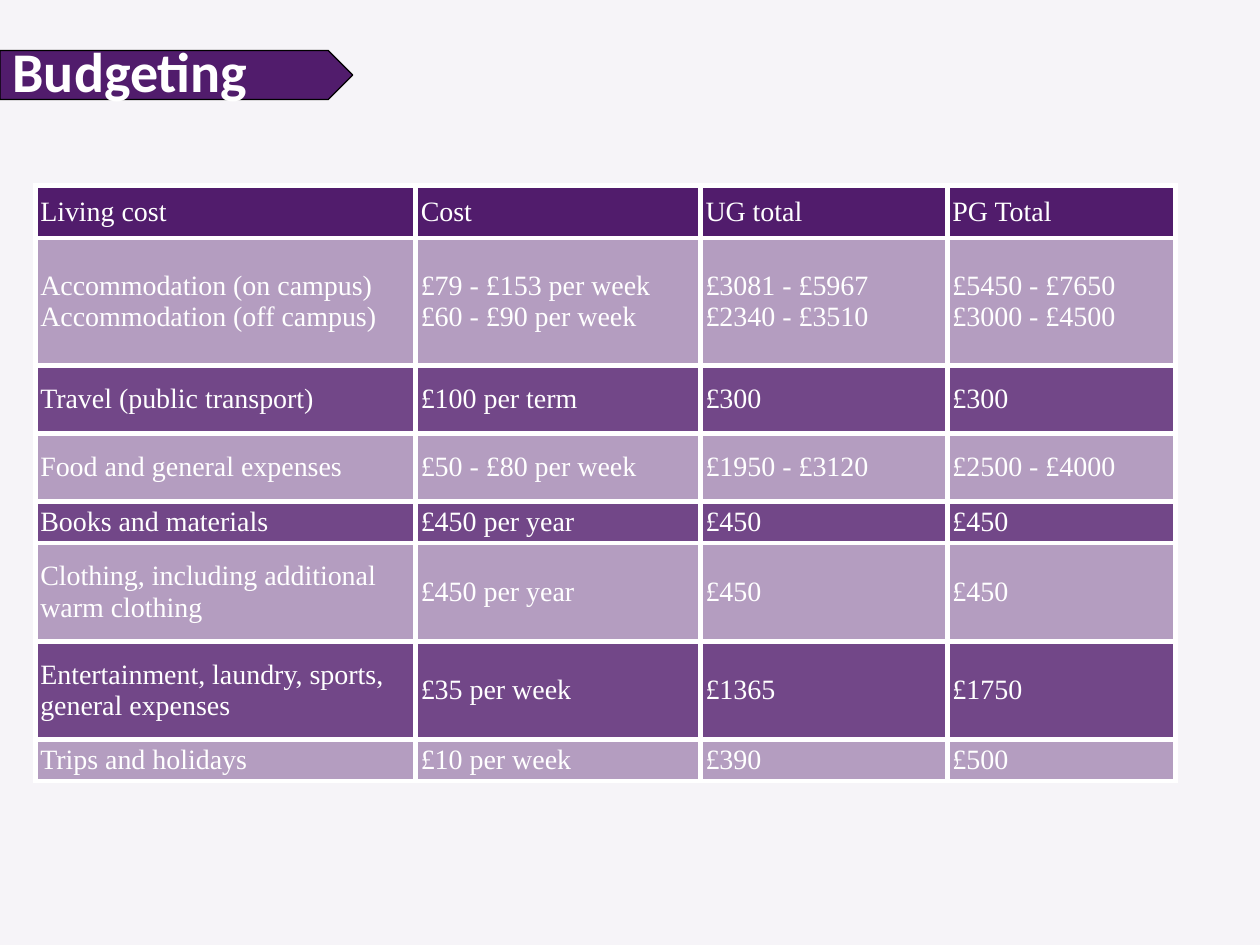
import pptx
import pptx.dml.color
import pptx.enum.shapes
import pptx.enum.text
import pptx.oxml
import pptx.oxml.ns
import pptx.util
from lxml import etree

WIDTH, HEIGHT = 10, 7.5
PURPLE, WHITE, BLACK, PALE = "511C6C", "FFFFFF", "000000", "F6F4F8"
COLUMNS = [3.02, 2.26, 1.96, 1.81]
ROWS = [
    (0.42, ["Living cost", "Cost", "UG total", "PG Total"]),
    (1.01, ["Accommodation (on campus)\vAccommodation (off campus)",
            "£79 - £153 per week\v£60 - £90 per week",
            "£3081 - £5967\v£2340 - £3510",
            "£5450 - £7650\v£3000 - £4500"]),
    (0.54, ["Travel (public transport)", "£100 per term", "£300", "£300"]),
    (0.54, ["Food and general expenses", "£50 - £80 per week",
            "£1950 - £3120", "£2500 - £4000"]),
    (0.33, ["Books and materials", "£450 per year", "£450", "£450"]),
    (0.78, ["Clothing, including additional warm clothing",
            "£450 per year", "£450", "£450"]),
    (0.78, ["Entertainment, laundry, sports, general expenses",
            "£35 per week", "£1365", "£1750"]),
    (0.33, ["Trips and holidays", "£10 per week", "£390", "£500"]),
]


def inches(*values):
    return [pptx.util.Inches(v) for v in values]


def paint(fill, color, alpha=100):
    fill.solid()
    fill.fore_color.rgb = pptx.dml.color.RGBColor.from_string(color)
    if alpha < 100:
        clr = fill._xPr.find(".//" + pptx.oxml.ns.qn("a:srgbClr"))
        etree.SubElement(clr, pptx.oxml.ns.qn("a:alpha"), val=str(alpha * 1000))


def write(tf, text, font, size, color=WHITE, bold=False):
    p = tf.paragraphs[0]
    p.text = text
    p.alignment = pptx.enum.text.PP_ALIGN.LEFT
    for r in p.runs:
        r.font.name = font
        r.font.size = pptx.util.Pt(size)
        r.font.bold = bold
        paint(r.font.fill, color)


def add_banner(s):
    sp = s.shapes.add_shape(pptx.enum.shapes.MSO_SHAPE.PENTAGON,
                            *inches(0, 0.4, 2.8, 0.39))
    sp.shadow.inherit = False
    paint(sp.fill, PURPLE)
    paint(sp.line.fill, BLACK)
    sp.line.width = pptx.util.Pt(0.75)


def place_title(s, text):
    sp = s.shapes.title
    sp.left, sp.top, sp.width, sp.height = inches(0, 0.21, 3.35, 0.7)
    tf = sp.text_frame
    tf.vertical_anchor = pptx.enum.text.MSO_ANCHOR.MIDDLE
    write(tf, text, "Calibri", 32, bold=True)
    s.shapes._spTree.append(sp._element)


def add_borders(cell, color, width):
    tcPr = cell._tc.get_or_add_tcPr()
    for i, side in enumerate(("lnL", "lnR", "lnT", "lnB")):
        tcPr.insert(i, pptx.oxml.parse_xml(
            f'<a:{side} {pptx.oxml.ns.nsdecls("a")} w="{pptx.util.Pt(width)}">'
            f'<a:solidFill><a:srgbClr val="{color}"/></a:solidFill></a:{side}>'))


def format_cell(cell, text, alpha):
    cell.margin_left = cell.margin_right = pptx.util.Inches(0.04)
    cell.margin_top = cell.margin_bottom = pptx.util.Inches(0.04)
    cell.vertical_anchor = pptx.enum.text.MSO_ANCHOR.MIDDLE
    write(cell.text_frame, text, "Times New Roman", 16)
    paint(cell.fill, PURPLE, alpha)
    add_borders(cell, WHITE, 3)


def add_costs(s):
    height = sum(h for h, _ in ROWS)
    table = s.shapes.add_table(len(ROWS), len(COLUMNS),
                               *inches(0.28, 1.47, sum(COLUMNS), height)).table
    for column, width in zip(table.columns, COLUMNS):
        column.width = pptx.util.Inches(width)
    for i, (h, texts) in enumerate(ROWS):
        table.rows[i].height = pptx.util.Inches(h)
        alpha = 100 if i == 0 else 40 if i % 2 else 80
        for j, text in enumerate(texts):
            format_cell(table.cell(i, j), text, alpha)


def main():
    prs = pptx.Presentation()
    prs.slide_width, prs.slide_height = inches(WIDTH, HEIGHT)
    s = prs.slides.add_slide(prs.slide_layouts[5])
    paint(s.background.fill, PALE)
    add_banner(s)
    place_title(s, "Budgeting")
    add_costs(s)
    prs.save("out.pptx")


if __name__ == "__main__":
    main()
